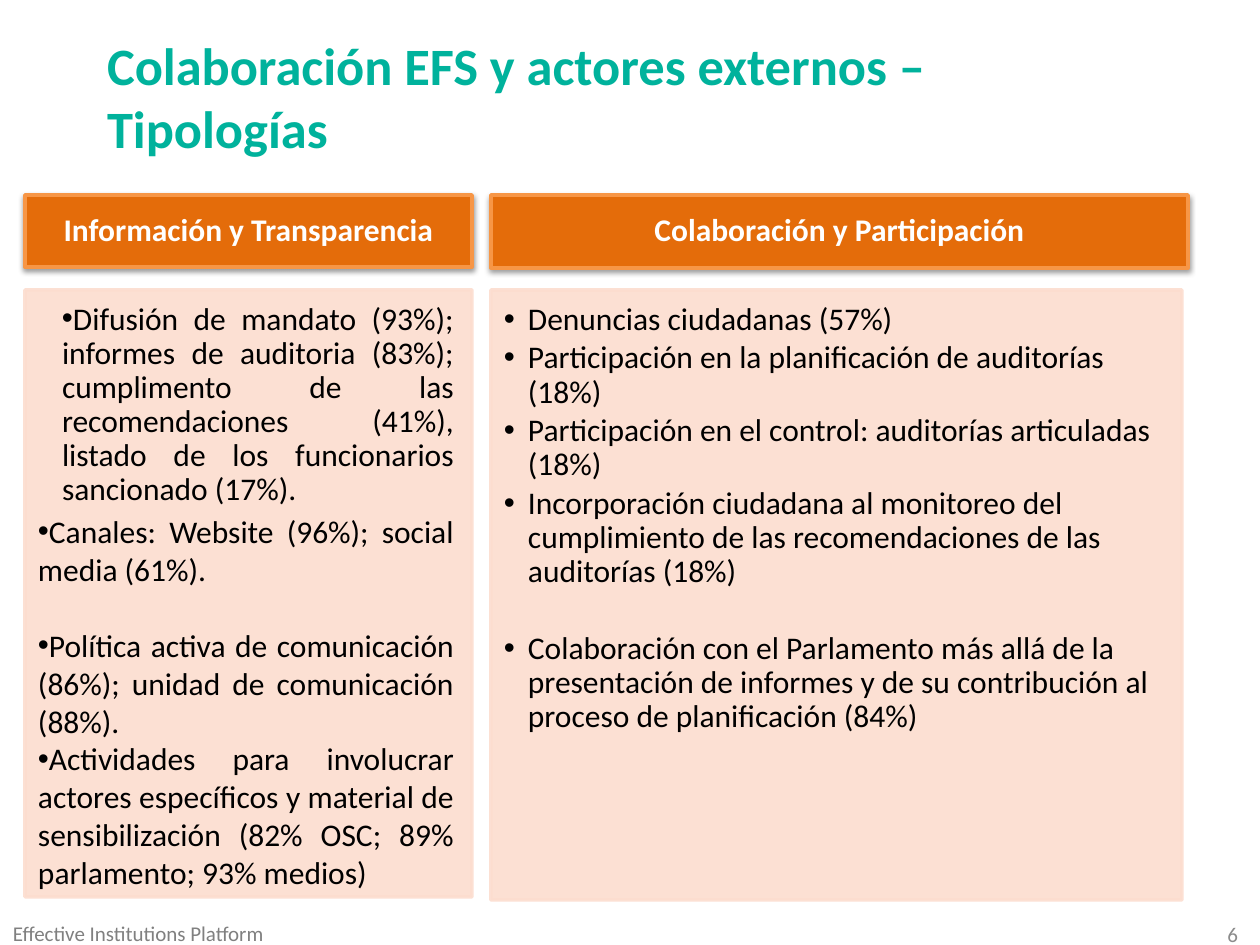
import pptx
import pptx.dml.color
import pptx.enum.shapes
import pptx.enum.text
import pptx.oxml.ns
import pptx.util
from lxml import etree

RGBColor = pptx.dml.color.RGBColor
ALIGN = pptx.enum.text.PP_ALIGN
ANCHOR = pptx.enum.text.MSO_ANCHOR
Pt = pptx.util.Pt

TEAL = RGBColor(0x00, 0xB2, 0x9C)
ORANGE = RGBColor(0xE4, 0x6C, 0x0A)
LIGHT_ORANGE = RGBColor(0xF7, 0x96, 0x46)
PEACH = RGBColor(0xFC, 0xDD, 0xCF)
WHITE = RGBColor(0xFF, 0xFF, 0xFF)
BLACK = RGBColor(0x00, 0x00, 0x00)
GRAY = RGBColor(0x80, 0x80, 0x80)
LIGHT_GRAY = RGBColor(0x8C, 0x8C, 0x8C)

PX_PER_INCH = 126
FONT = "Calibri"

# Paragraph layouts: bullet indents in px, paragraph format values
INDENTED = {"margin": 24, "hanging": 0,
            "format": {"alignment": ALIGN.JUSTIFY, "line_spacing": 0.9, "space_after": Pt(2.7)}}
FLUSH = {"margin": 0, "hanging": 0, "format": {"alignment": ALIGN.JUSTIFY}}
HANGING = {"margin": 24, "hanging": -24,
           "format": {"alignment": ALIGN.LEFT, "line_spacing": 0.9, "space_after": Pt(2.7)}}
SECTION_GAP = Pt(22)

# Content: each item is (text, layout, starts a new section)
TITLE = ["Colaboración EFS y actores externos –", "Tipologías"]
FOOTER = "Effective Institutions Platform"
SLIDE_NUMBER = "6"
COLUMNS = [
    {"heading": "Información y Transparencia",
     "heading_box": (25, 195, 447, 72), "body_box": (25, 290, 447, 607),
     "items": [
         ("Difusión de mandato (93%); informes de auditoria (83%); cumplimento de las "
          "recomendaciones (41%), listado de los funcionarios sancionado (17%).", INDENTED, False),
         ("Canales: Website (96%); social media (61%).", FLUSH, False),
         ("Política activa de comunicación (86%); unidad de comunicación (88%).", FLUSH, True),
         ("Actividades para involucrar actores específicos y material de sensibilización "
          "(82% OSC; 89% parlamento; 93% medios)", FLUSH, False)]},
    {"heading": "Colaboración y Participación",
     "heading_box": (491, 195, 697, 73), "body_box": (491, 290, 691, 610),
     "items": [
         ("Denuncias ciudadanas (57%)", HANGING, False),
         ("Participación en la planificación de auditorías (18%)", HANGING, False),
         ("Participación en el control: auditorías articuladas (18%)", HANGING, False),
         ("Incorporación ciudadana al monitoreo del cumplimiento de las recomendaciones "
          "de las auditorías (18%)", HANGING, False),
         ("Colaboración con el Parlamento más allá de la presentación de informes y de su "
          "contribución al proceso de planificación (84%)", HANGING, True)]},
]


def px(value):
    return pptx.util.Emu(round(value * 914400 / PX_PER_INCH))


def set_values(target, values):
    for name, value in values.items():
        setattr(target, name, value)


def add_element(parent, tag, **attributes):
    return etree.SubElement(parent, pptx.oxml.ns.qn(tag), attributes)


def set_frame(shape, anchor, insets=(13, 6, 13, 6)):
    sides = ("margin_left", "margin_top", "margin_right", "margin_bottom")
    set_values(shape.text_frame, {"word_wrap": True, "vertical_anchor": anchor,
                                  **dict(zip(sides, map(px, insets)))})


def add_paragraph(shape, index, text, size, color, bold=False, layout=None, **format_values):
    frame = shape.text_frame
    paragraph = frame.paragraphs[0] if index == 0 else frame.add_paragraph()
    if layout:
        properties = paragraph._p.get_or_add_pPr()
        properties.set("marL", str(px(layout["margin"])))
        properties.set("indent", str(px(layout["hanging"])))
        add_element(properties, "a:buFont", typeface="Arial")
        add_element(properties, "a:buChar", char="•")
        format_values = {**layout["format"], **format_values}
    set_values(paragraph, format_values)
    run = paragraph.add_run()
    run.text = text
    set_values(run.font, {"name": FONT, "size": Pt(size), "bold": bold})
    run.font.color.rgb = color


def add_text_box(slide, box, lines, size, color, anchor=ANCHOR.TOP, bold=False, alignment=ALIGN.LEFT):
    shape = slide.shapes.add_textbox(*map(px, box))
    set_frame(shape, anchor)
    for index, line in enumerate(lines):
        add_paragraph(shape, index, line, size, color, bold, alignment=alignment)


def add_panel(slide, box, fill, line):
    shape = slide.shapes.add_shape(pptx.enum.shapes.MSO_SHAPE.RECTANGLE, *map(px, box))
    shape.shadow.inherit = False
    shape.fill.solid()
    shape.fill.fore_color.rgb = fill
    shape.line.color.rgb = line
    shape.line.width = Pt(2)
    return shape


def add_heading(slide, box, text):
    shape = add_panel(slide, box, ORANGE, LIGHT_ORANGE)
    effects = shape._element.spPr.find(pptx.oxml.ns.qn("a:effectLst"))
    shadow = add_element(effects, "a:outerShdw", blurRad=str(Pt(3.1)), dist=str(Pt(1.6)),
                         dir="5400000", rotWithShape="0")
    color = add_element(shadow, "a:srgbClr", val=str(BLACK))
    add_element(color, "a:alpha", val="38000")
    set_frame(shape, ANCHOR.MIDDLE, (18, 10, 18, 10))
    add_paragraph(shape, 0, text, 18, WHITE, True, alignment=ALIGN.CENTER, line_spacing=0.9)


def add_body(slide, box, items):
    shape = add_panel(slide, box, PEACH, PEACH)
    for color in list(shape._element.spPr.iter(pptx.oxml.ns.qn("a:srgbClr"))):
        add_element(color, "a:alpha", val="90000")
    set_frame(shape, ANCHOR.TOP, (13, 13, 18, 20))
    for index, (text, layout, new_section) in enumerate(items):
        spacing = {"space_before": SECTION_GAP if new_section else Pt(0)}
        add_paragraph(shape, index, text, 18, BLACK, layout=layout, **spacing)


def main():
    presentation = pptx.Presentation()
    presentation.slide_width = px(1260)
    presentation.slide_height = px(945)
    slide = presentation.slides.add_slide(presentation.slide_layouts[6])

    # Footer and slide number
    add_text_box(slide, (958, 919, 293, 30), [SLIDE_NUMBER], 12, LIGHT_GRAY,
                 ANCHOR.MIDDLE, alignment=ALIGN.RIGHT)
    add_text_box(slide, (0, 915, 610, 38), [FOOTER], 12, GRAY)

    # Title
    add_text_box(slide, (94, 27, 1142, 140), TITLE, 30, TEAL, bold=True)

    # Columns: heading above a bulleted panel
    for column in COLUMNS:
        add_heading(slide, column["heading_box"], column["heading"])
        add_body(slide, column["body_box"], column["items"])

    presentation.save("out.pptx")


if __name__ == "__main__":
    main()
